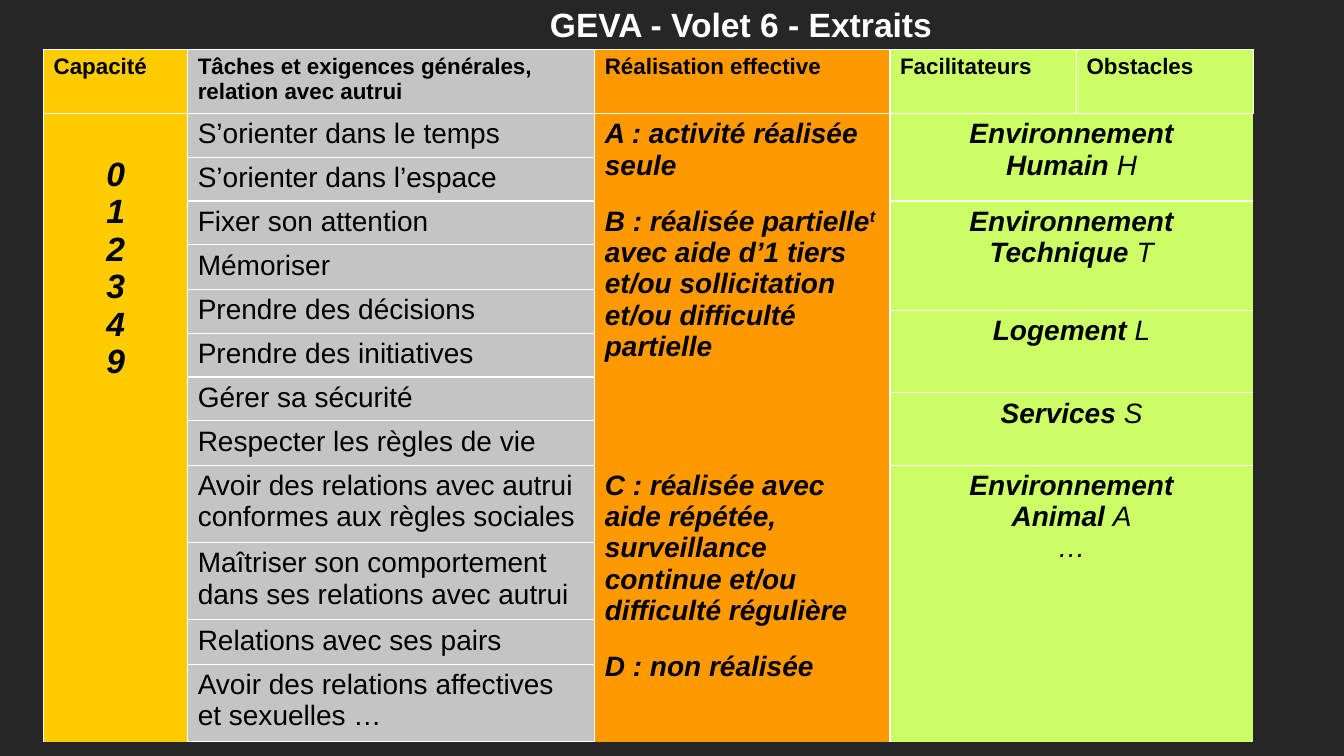
from lxml.etree import SubElement
from pptx import Presentation
from pptx.dml.color import RGBColor
from pptx.enum.text import MSO_ANCHOR as Anchor, PP_ALIGN as Align
from pptx.oxml.ns import qn
from pptx.util import Cm, Pt

BACKGROUND = RGBColor(0x26, 0x26, 0x26)
WHITE = RGBColor(0xFF, 0xFF, 0xFF)
BLACK = RGBColor(0, 0, 0)
YELLOW = RGBColor(0xFF, 0xCC, 0x00)
GREY = RGBColor(0xC4, 0xC4, 0xC4)
ORANGE = RGBColor(0xFF, 0x99, 0x00)
GREEN = RGBColor(0xCC, 0xFF, 0x66)

COLUMN_WIDTHS = [3.63, 10.26, 7.44, 4.7, 4.45]
ROW_HEIGHTS = [1.51, 1.04, 1.04, 1.04, 1.13, 0.53, 0.51, 1.04,
               0.4, 0.64, 1.12, 1.83, 1.83, 1.12, 1.83]

HEADERS = [
    ("Capacité", YELLOW),
    ("Tâches et exigences générales,\nrelation avec autrui", GREY),
    ("Réalisation effective", ORANGE),
    ("Facilitateurs", GREEN),
    ("Obstacles", GREEN),
]
# Task, number of rows it spans
TASKS = [
    ("S’orienter dans le temps", 1),
    ("S’orienter dans l’espace", 1),
    ("Fixer son attention", 1),
    ("Mémoriser", 1),
    ("Prendre des décisions", 2),
    ("Prendre des initiatives", 1),
    ("Gérer sa sécurité", 2),
    ("Respecter les règles de vie", 1),
    ("Avoir des relations avec autrui conformes aux règles sociales", 1),
    ("Maîtriser son comportement dans ses relations avec autrui", 1),
    ("Relations avec ses pairs", 1),
    ("Avoir des relations affectives et sexuelles …", 1),
]
# Level of achievement, rows spanned, sides with a border
LEVELS = [
    ("A : activité réalisée seule", 2, "LTR"),
    ("B : réalisée partielle^t^ avec aide d’1 tiers et/ou sollicitation "
     "et/ou difficulté partielle", 8, "LR"),
    ("C : réalisée avec aide répétée, surveillance continue et/ou "
     "difficulté régulière\nD : non réalisée", 4, "LRB"),
]
# Name, code letter with what follows it, rows spanned
FACTORS = [
    ("Environnement\nHumain ", "H", 2),
    ("Environnement\nTechnique ", "T", 3),
    ("Logement ", "L", 3),
    ("Services ", "S", 2),
    ("Environnement\nAnimal ", "A\n…", 4),
]


class Deck:
    font_name = "Arial"
    border_width = Pt(1)

    def __init__(self):
        self.presentation = Presentation()
        self.presentation.slide_width = Cm(33.87)
        self.presentation.slide_height = Cm(19.05)
        self.slide = self.presentation.slides.add_slide(
            self.presentation.slide_layouts[6])
        background = self.slide.background.fill
        background.solid()
        background.fore_color.rgb = BACKGROUND

    def style(self, font, size, color=BLACK, bold=False, italic=False):
        font.name, font.size = self.font_name, Pt(size)
        font.bold, font.italic = bold, italic
        font.color.rgb = color

    def title(self, text, left, top, width, height):
        frame = self.slide.shapes.add_textbox(
            Cm(left), Cm(top), Cm(width), Cm(height)).text_frame
        frame.word_wrap = True
        frame.vertical_anchor = Anchor.MIDDLE
        frame.text = text
        self.style(frame.paragraphs[0].runs[0].font, 24, WHITE, bold=True)

    def grid(self, left, top):
        self.table = self.slide.shapes.add_table(
            len(ROW_HEIGHTS), len(COLUMN_WIDTHS), Cm(left), Cm(top),
            Cm(sum(COLUMN_WIDTHS)), Cm(sum(ROW_HEIGHTS))).table
        self.table.first_row = self.table.horz_banding = False
        for column, width in zip(self.table.columns, COLUMN_WIDTHS):
            column.width = Cm(width)
        for row, height in zip(self.table.rows, ROW_HEIGHTS):
            row.height = Cm(height)

    def block(self, row, column, fill, rows=1, columns=1, sides="LRTB"):
        """Merge, fill and outline a range of cells; return its first cell."""
        last_row, last_column = row + rows - 1, column + columns - 1
        first = self.table.cell(row, column)
        if rows * columns > 1:
            first.merge(self.table.cell(last_row, last_column))
        for r in range(row, last_row + 1):
            for c in range(column, last_column + 1):
                edges = {"L": c == column, "R": c == last_column,
                         "T": r == row, "B": r == last_row}
                cell = self.table.cell(r, c)
                for side, on_edge in edges.items():
                    self.border(cell, side, on_edge and side in sides)
                cell.fill.solid()
                cell.fill.fore_color.rgb = fill
        return first

    def border(self, cell, side, visible):
        line = SubElement(cell._tc.get_or_add_tcPr(), qn(f"a:ln{side}"),
                          w=str(self.border_width))
        if visible:
            solid = SubElement(line, qn("a:solidFill"))
            SubElement(solid, qn("a:srgbClr"), val=str(WHITE))
        else:
            SubElement(line, qn("a:noFill"))

    def cell_text(self, cell, text, size, bold=False, italic=False, align=None):
        """Fill a cell; text between ^ marks is superscript."""
        body, *rest = text.split("^")
        frame = cell.text_frame
        frame.text = body
        for index, part in enumerate(rest):
            run = frame.paragraphs[-1].add_run()
            run.text = part
            if index % 2 == 0:
                run._r.get_or_add_rPr().set("baseline", "30000")
        for paragraph in frame.paragraphs:
            paragraph.alignment = align
            for run in paragraph.runs:
                self.style(run.font, size, bold=bold, italic=italic)
        return frame.paragraphs

    def append(self, paragraph, text, size):
        run = paragraph.add_run()
        run.text = text
        self.style(run.font, size, italic=True)


def main():
    deck = Deck()
    deck.title("GEVA - Volet 6 - Extraits", 13.61, -0.03, 11.23, 1.27)
    deck.grid(1.1, 1.25)

    for column, (heading, color) in enumerate(HEADERS):
        deck.cell_text(deck.block(0, column, color), heading, 16, bold=True)

    scale = deck.block(1, 0, YELLOW, rows=14)
    scale.margin_top = Cm(1.07)
    deck.cell_text(scale, "0\n1\n2\n3\n4\n9", 24, True, True, Align.CENTER)

    row = 1
    for task, span in TASKS:
        deck.cell_text(deck.block(row, 1, GREY, span), task, 20)
        row += span

    row = 1
    for level, span, sides in LEVELS:
        cell = deck.block(row, 2, ORANGE, span, sides=sides)
        for paragraph in deck.cell_text(cell, level, 20, True, True)[1:]:
            paragraph.space_before = Pt(18)
        row += span

    row = 1
    for factor, code, span in FACTORS:
        cell = deck.block(row, 3, GREEN, span, columns=2)
        names = deck.cell_text(cell, factor, 20, True, True, Align.CENTER)
        letter, *more = code.split("\n")
        deck.append(names[-1], letter, 20)
        for line in more:
            paragraph = cell.text_frame.add_paragraph()
            paragraph.alignment = Align.CENTER
            deck.append(paragraph, line, 20)
        row += span

    deck.presentation.save("out.pptx")


if __name__ == "__main__":
    main()
